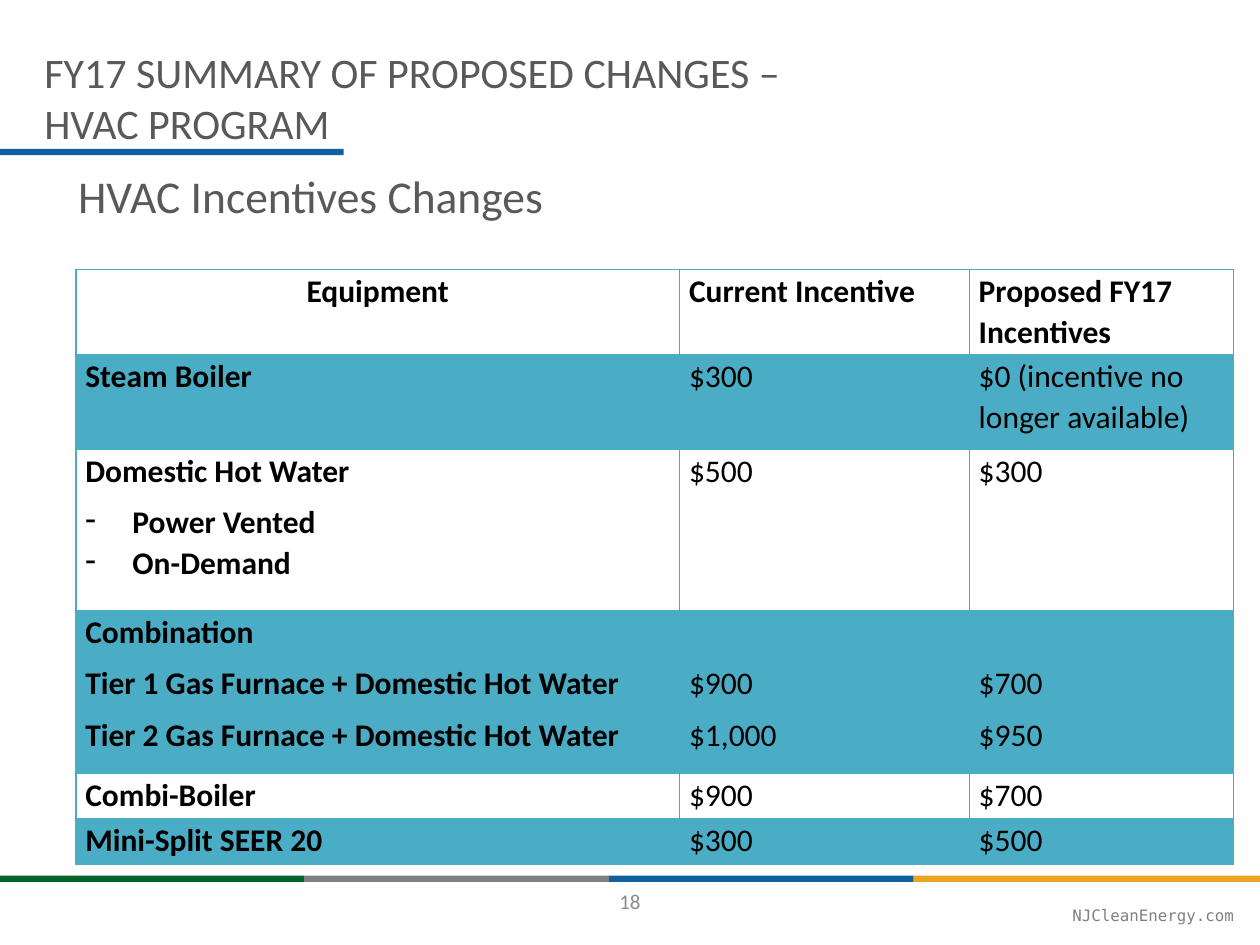
from itertools import accumulate

from lxml import etree
from pptx import Presentation
from pptx import util as u
from pptx.dml.color import RGBColor
from pptx.enum import shapes, text
from pptx.oxml import ns

COLORS = {
    "green": "00652A",
    "gray": "808080",
    "blue": "105F9E",
    "gold": "EEA420",
    "heading": "595959",
    "number": "8C8C8C",
    "table": "4BACC6",
    "black": "000000",
}
FONT = "Calibri"
MONO = "DejaVu Sans Mono"
BULLET = "- "
HEADER = ["Equipment", "Current Incentive", "Proposed FY17 Incentives"]
INCENTIVES = [
    (["Steam Boiler"], ["$300"], ["$0 (incentive no longer available)"]),
    (["Domestic Hot Water", "- Power Vented", "- On-Demand"], ["$500"], ["$300"]),
    (
        [
            "Combination",
            "Tier 1 Gas Furnace + Domestic Hot Water",
            "Tier 2 Gas Furnace + Domestic Hot Water",
        ],
        ["$900", "$1,000"],
        ["$700", "$950"],
    ),
    (["Combi-Boiler"], ["$900"], ["$700"]),
    (["Mini-Split SEER 20"], ["$300"], ["$500"]),
]
COLUMN_WIDTHS = [12.17, 5.84, 5.33]
ROW_HEIGHTS = [1.73, 1.9, 3.25, 3.28, 0.92, 0.92]
TIER_OFFSET = 1.04


def color(name):
    return RGBColor.from_string(COLORS[name])


def place(shape, left, top, width, height):
    shape.left, shape.top = u.Cm(left), u.Cm(top)
    shape.width, shape.height = u.Cm(width), u.Cm(height)


def style(paragraph, size, tone, name=FONT, bold=False):
    for run in paragraph.runs:
        run.font.name = name
        run.font.size = u.Pt(size)
        run.font.bold = bold
        run.font.color.rgb = color(tone)


def add_bar(slide, left, top, width, tone):
    bar = slide.shapes.add_shape(
        shapes.MSO_SHAPE.RECTANGLE, u.Cm(left), u.Cm(top), u.Cm(width), u.Cm(0.13)
    )
    bar.shadow.inherit = False
    bar.fill.solid()
    bar.fill.fore_color.rgb = color(tone)
    bar.line.fill.background()


def fill_placeholder(placeholder, words, size, box):
    place(placeholder, *box)
    frame = placeholder.text_frame
    frame.text = words
    frame.auto_size = text.MSO_AUTO_SIZE.NONE
    frame.vertical_anchor = text.MSO_ANCHOR.TOP
    heading = frame.paragraphs[0]
    properties = heading._p.get_or_add_pPr()
    properties.set("marL", "0")
    properties.set("indent", "0")
    etree.SubElement(properties, ns.qn("a:buNone"))
    heading.alignment = text.PP_ALIGN.LEFT
    heading.space_before = u.Pt(0)
    style(heading, size, "heading")


def add_label(slide, words, box, size, tone, name, align, margin=0):
    label = slide.shapes.add_textbox(*(u.Cm(length) for length in box))
    frame = label.text_frame
    frame.word_wrap = True
    frame.vertical_anchor = text.MSO_ANCHOR.MIDDLE
    frame.margin_left = frame.margin_right = u.Cm(margin)
    frame.margin_top = frame.margin_bottom = u.Cm(margin / 2)
    frame.text = words
    frame.paragraphs[0].alignment = align
    style(frame.paragraphs[0], size, tone, name)


def set_borders(cell, top, bottom):
    properties = cell._tc.get_or_add_tcPr()
    for side, points in (("L", 1), ("R", 1), ("T", top), ("B", bottom)):
        line = etree.SubElement(properties, ns.qn(f"a:ln{side}"), w=str(u.Pt(points)))
        paint = etree.SubElement(line, ns.qn("a:solidFill"))
        etree.SubElement(paint, ns.qn("a:srgbClr"), val=COLORS["table"])


def shade(cell):
    cell.fill.solid()
    cell.fill.fore_color.rgb = color("table")
    tint = cell._tc.tcPr.find(".//" + ns.qn("a:srgbClr"))
    etree.SubElement(tint, ns.qn("a:alpha"), val="20000")


def add_dash(paragraph):
    properties = paragraph._p.get_or_add_pPr()
    properties.set("marL", str(u.Cm(0.95)))
    properties.set("indent", str(u.Cm(-0.95)))
    etree.SubElement(properties, ns.qn("a:buChar"), char="-")


def write_cell(cell, lines, bold):
    cell.margin_left = cell.margin_right = u.Cm(0.19)
    cell.margin_top = cell.margin_bottom = 0
    frame = cell.text_frame
    frame.text = "\n".join(line.removeprefix(BULLET) for line in lines)
    following = lines[1:] + [""]
    for paragraph, line, after in zip(frame.paragraphs, lines, following):
        dashed = line.startswith(BULLET)
        if dashed:
            add_dash(paragraph)
        paragraph.line_spacing = 1.07
        paragraph.space_after = u.Pt(0 if dashed and after else 6)
        style(paragraph, 18, "black", bold=bold)


def add_incentive_table(slide):
    rows = [[[title] for title in HEADER], *INCENTIVES]
    table = slide.shapes.add_table(
        len(rows), len(HEADER), u.Cm(1.53), u.Cm(5.43),
        u.Cm(sum(COLUMN_WIDTHS)), u.Cm(sum(ROW_HEIGHTS)),
    ).table
    table.first_row = table.horz_banding = False
    for column, width in zip(table.columns, COLUMN_WIDTHS):
        column.width = u.Cm(width)
    for r, (row, height) in enumerate(zip(rows, ROW_HEIGHTS)):
        table.rows[r].height = u.Cm(height)
        for c, lines in enumerate(row):
            cell = table.cell(r, c)
            write_cell(cell, lines, bold=r == 0 or c == 0)
            if len(lines) < len(row[0]) and len(lines) > 1:
                cell.margin_top = u.Cm(TIER_OFFSET)
            set_borders(cell, 2 if r == 1 else 1, 2 if r == 0 else 1)
            if r % 2:
                shade(cell)
            else:
                cell.fill.background()
    table.cell(0, 0).text_frame.paragraphs[0].alignment = text.PP_ALIGN.CENTER


def main():
    deck = Presentation()
    deck.slide_width, deck.slide_height = u.Cm(25.4), u.Cm(19.05)
    slide = deck.slides.add_slide(deck.slide_layouts[1])

    stripe_widths = [6.13, 6.15, 6.14, 6.98]
    stripe_lefts = accumulate(stripe_widths[:-1], initial=0)
    stripe_tones = ["green", "gray", "blue", "gold"]
    for left, width, tone in zip(stripe_lefts, stripe_widths, stripe_tones):
        add_bar(slide, left, 17.65, width, tone)
    add_bar(slide, 0, 3, 6.93, "blue")

    title, subtitle = slide.placeholders
    fill_placeholder(
        title, "FY17 SUMMARY OF PROPOSED CHANGES –\vHVAC PROGRAM", 24,
        (0.64, 0.82, 18.24, 1.9),
    )
    fill_placeholder(subtitle, "HVAC Incentives Changes", 26, (1.32, 3.25, 22.86, 14.15))
    add_incentive_table(slide)
    add_label(
        slide, "NJCleanEnergy.com", (0, 18.24, 24.87, 0.44),
        9, "gray", MONO, text.PP_ALIGN.RIGHT,
    )
    add_label(
        slide, "18", (9.84, 17.65, 5.72, 1.02),
        12, "number", FONT, text.PP_ALIGN.CENTER, margin=0.25,
    )
    deck.save("out.pptx")


if __name__ == "__main__":
    main()
